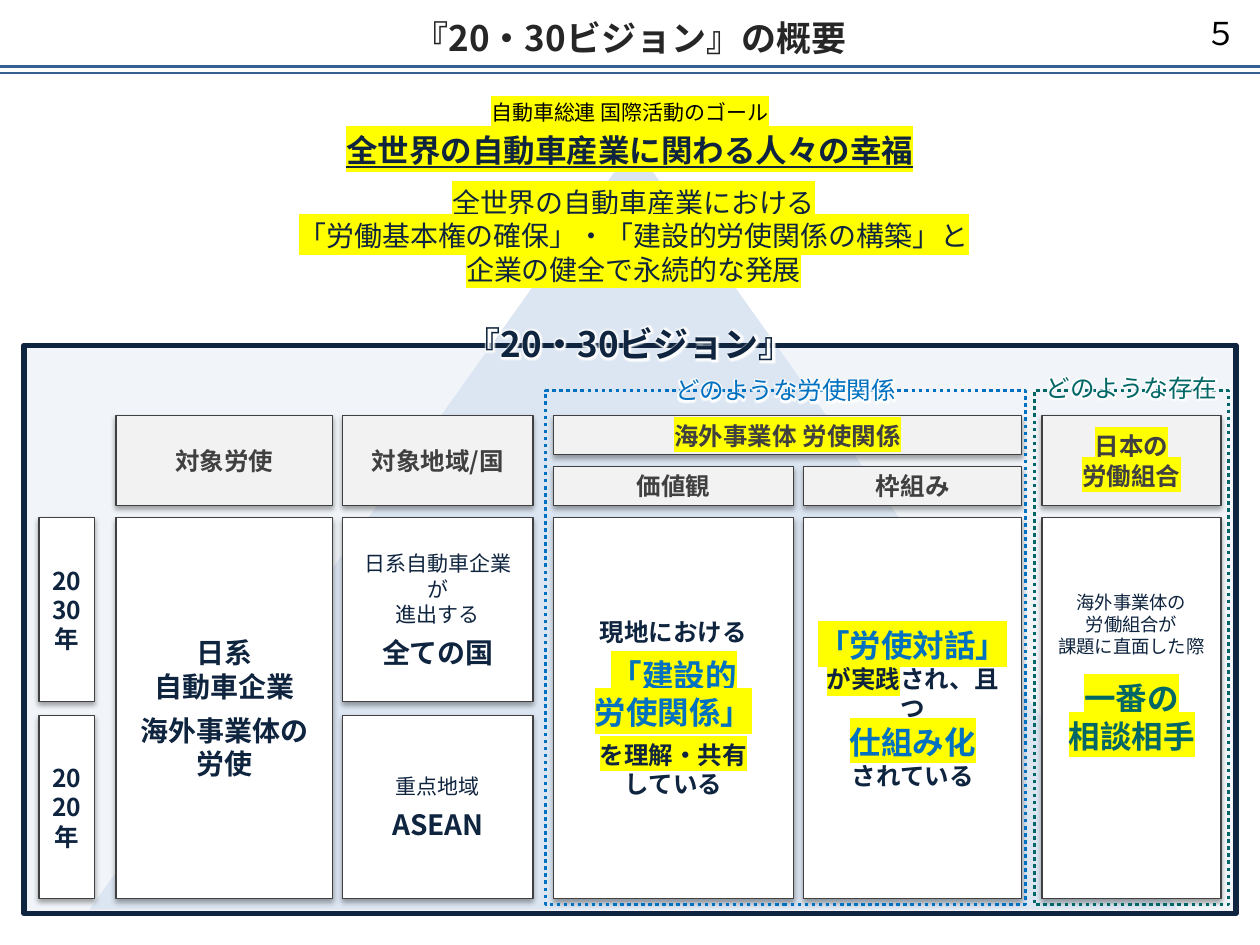
from dataclasses import dataclass

from lxml.etree import SubElement
from pptx import Presentation
from pptx.dml.color import RGBColor
from pptx.enum.dml import MSO_LINE
from pptx.enum.shapes import MSO_CONNECTOR, MSO_SHAPE
from pptx.enum.text import MSO_ANCHOR, MSO_AUTO_SIZE, PP_ALIGN
from pptx.oxml.ns import qn
from pptx.util import Inches, Pt


@dataclass(frozen=True)
class Theme:
    font: str = "Noto Sans CJK JP"
    digit: str = "Calibri"
    navy: str = "0F243E"
    gray: str = "404040"
    title: str = "262626"
    rule: str = "376092"
    pale: str = "DCE6F2"
    head: str = "F2F2F2"
    white: str = "FFFFFF"
    black: str = "000000"
    blue: str = "0070C0"
    green: str = "006666"
    mark: str = "FFFF00"
    tiny: float = 10.5
    small: float = 12
    body: float = 14
    big: float = 16
    key: float = 18
    top: float = 20


T = Theme()
WIDE, HIGH = 10, 7.5

# Grid: name -> (start, length) in inches
COLS = {"year": (0.31, 0.44), "who": (0.92, 1.72), "where": (2.72, 1.51),
        "value": (4.39, 1.91), "frame": (6.38, 1.73), "both": (4.39, 3.72),
        "union": (8.27, 1.42)}
ROWS = {"head": (3.3, 0.71), "upper": (3.3, 0.31), "lower": (3.7, 0.31),
        "body": (4.11, 3.02), "2030": (4.11, 1.46), "2020": (5.68, 1.45)}


def rgb(code):
    return RGBColor.from_string(code)


def node(parent, tag, **attrs):
    return SubElement(parent, qn("a:" + tag), {k: str(v) for k, v in attrs.items()})


def tint(parent, code, alpha=None):
    color = node(parent, "srgbClr", val=code)
    if alpha is not None:
        node(color, "alpha", val=alpha * 1000)


def say(box, text, size=T.body, color=T.navy, font=T.font, bold=False,
        under=False, mark=False, glow=False, gap=0, join=False):
    """Add text, one paragraph a line; join continues the last paragraph."""
    frame = box.text_frame
    for i, part in enumerate(text.split("\n")):
        para = frame.paragraphs[-1]
        if para.runs and not join:
            para = frame.add_paragraph()
        para.alignment = PP_ALIGN.CENTER
        if gap and i == 0:
            para.space_before = Pt(gap)
        run = para.add_run()
        run.text = part
        run.font.size, run.font.bold = Pt(size), bold
        run.font.underline = under
        run.font.color.rgb = rgb(color)
        props = run.font.fill._xPr
        if glow:
            halo = node(node(props, "effectLst"), "glow", rad=Pt(5))
            tint(halo, T.white)
        if mark:
            tint(node(props, "highlight"), T.mark)
        for tag in ("latin", "ea"):
            node(props, tag, typeface=font)


def shape(slide, x, y, w, h, kind=MSO_SHAPE.RECTANGLE, fill=None, alpha=None,
          line=None, width=0.75, dash=None):
    item = slide.shapes.add_shape(kind, *map(Inches, (x, y, w, h)))
    item.shadow.inherit = False
    if fill:
        item.fill.solid()
        item.fill.fore_color.rgb = rgb(fill)
        if alpha:
            color = item.element.spPr.find(qn("a:solidFill"))[0]
            node(color, "alpha", val=alpha * 1000)
    else:
        item.fill.background()
    if line:
        item.line.color.rgb = rgb(line)
        item.line.width = Pt(width)
        if dash:
            item.line.dash_style = dash
    else:
        item.line.fill.background()
    return item


def label(slide, x, y, w, h, text, **style):
    box = slide.shapes.add_textbox(*map(Inches, (x, y, w, h)))
    box.text_frame.word_wrap = True
    say(box, text, **style)
    return box


def cell(slide, col, row, fill=T.white):
    (x, w), (y, h) = COLS[col], ROWS[row]
    box = shape(slide, x, y, w, h, fill=fill, line=T.gray)
    shade = node(box.element.spPr.find(qn("a:effectLst")), "outerShdw",
                 blurRad=Pt(3.1), dist=Pt(1.8), dir=5400000, rotWithShape=0)
    tint(shade, T.black, 35)
    box.text_frame.word_wrap = True
    box.text_frame.vertical_anchor = MSO_ANCHOR.MIDDLE
    return box


def rule(slide, y, width):
    line = slide.shapes.add_connector(
        MSO_CONNECTOR.STRAIGHT, 0, Inches(y), Inches(WIDE), Inches(y))
    line.line.color.rgb = rgb(T.rule)
    line.line.width = Pt(width)
    node(line.element.spPr, "effectLst")


def group(slide, x, w, text, color, top):
    """Dotted frame with its name on the upper edge."""
    shape(slide, x, 3.1, w, 4.08, line=color, width=2, dash=MSO_LINE.ROUND_DOT)
    span = 3.81
    label(slide, x + (w - span) / 2, top, span, 0.34, text, color=color, glow=True)


def banner(slide):
    title = slide.shapes.title
    bar = shape(slide, 0, 0, WIDE, 0.53, fill=T.white, line=T.white, width=2)
    title.element.addprevious(bar.element)
    title.left, title.top, title.width, title.height = map(
        Inches, (0, 0.08, WIDE, 0.44))
    title.text_frame.auto_size = MSO_AUTO_SIZE.NONE
    title.text_frame.vertical_anchor = MSO_ANCHOR.TOP
    say(title, "『20・30ビジョン』の概要", size=T.top, color=T.title, bold=True)
    rule(slide, 0.53, 1.5)
    rule(slide, 0.58, 0.75)
    page = label(slide, 9.38, 0, 0.62, 0.52, "５", size=T.key, color=T.black,
                 font=T.digit)
    page.text_frame.vertical_anchor = MSO_ANCHOR.MIDDLE


def goals(slide):
    shape(slide, 0.71, 1.15, 8.64, 6.07, MSO_SHAPE.ISOSCELES_TRIANGLE, fill=T.pale)
    label(slide, 0, 0.74, WIDE, 0.3, "自動車総連 国際活動のゴール",
          size=T.small, color=T.black, mark=True)
    label(slide, 0, 0.99, WIDE, 0.4, "全世界の自動車産業に関わる人々の幸福",
          size=T.key, bold=True, under=True, mark=True)
    label(slide, 0.03, 1.42, WIDE, 0.91,
          "全世界の自動車産業における\n"
          "「労働基本権の確保」・「建設的労使関係の構築」と\n"
          "企業の健全で永続的な発展", size=T.big, mark=True)


def heads(slide):
    for col, row, text, mark in (
            ("who", "head", "対象労使", False),
            ("where", "head", "対象地域/国", False),
            ("both", "upper", "海外事業体 労使関係", True),
            ("value", "lower", "価値観", False),
            ("frame", "lower", "枠組み", False),
            ("union", "head", "日本の\n労働組合", True)):
        say(cell(slide, col, row, T.head), text, color=T.gray, bold=True, mark=mark)


def bodies(slide):
    for year in ("2030", "2020"):
        say(cell(slide, "year", year), year + "年", bold=True)

    who = cell(slide, "who", "body")
    say(who, "日系\n自動車企業", size=T.big, bold=True)
    say(who, "海外事業体の\n労使", size=T.big, bold=True, gap=6)

    for year, lead, goal in (("2030", "日系自動車企業が\n進出する", "全ての国"),
                             ("2020", "重点地域", "ASEAN")):
        area = cell(slide, "where", year)
        say(area, lead, size=T.small)
        say(area, goal, size=T.big, bold=True, gap=5)

    strong = dict(size=T.key, color=T.blue, bold=True, mark=True)
    value = cell(slide, "value", "body")
    say(value, "現地における", bold=True)
    say(value, "「建設的\n労使関係」", gap=5, **strong)
    say(value, "を理解・共有", bold=True, mark=True, gap=5)
    say(value, "している", bold=True)

    frame = cell(slide, "frame", "body")
    say(frame, "「労使対話」", **strong)
    say(frame, "が実践", bold=True, mark=True, join=True)
    say(frame, "され、且つ", bold=True, join=True)
    say(frame, "仕組み化", **strong)
    say(frame, "されている", bold=True)

    union = cell(slide, "union", "body")
    union.text_frame.vertical_anchor = MSO_ANCHOR.TOP
    union.text_frame.margin_top = Inches(0.58)
    say(union, "海外事業体の\n労働組合が\n課題に直面した際", size=T.tiny)
    say(union, "一番の\n相談相手", gap=12.5, **{**strong, "color": T.green})


def main():
    deck = Presentation()
    deck.slide_width, deck.slide_height = Inches(WIDE), Inches(HIGH)
    slide = deck.slides.add_slide(deck.slide_layouts[5])
    banner(slide)
    goals(slide)
    # Vision panel
    shape(slide, 0.19, 2.74, 9.62, 4.51, fill=T.pale, alpha=40, line=T.navy, width=3)
    label(slide, 0.19, 2.51, 9.62, 0.44, "『20・30ビジョン』", size=T.top,
          bold=True, glow=True)
    heads(slide)
    bodies(slide)
    group(slide, 4.33, 3.81, "どのような労使関係", T.blue, 2.93)
    group(slide, 8.21, 1.54, "どのような存在", T.green, 2.91)
    deck.save("out.pptx")


if __name__ == "__main__":
    main()
